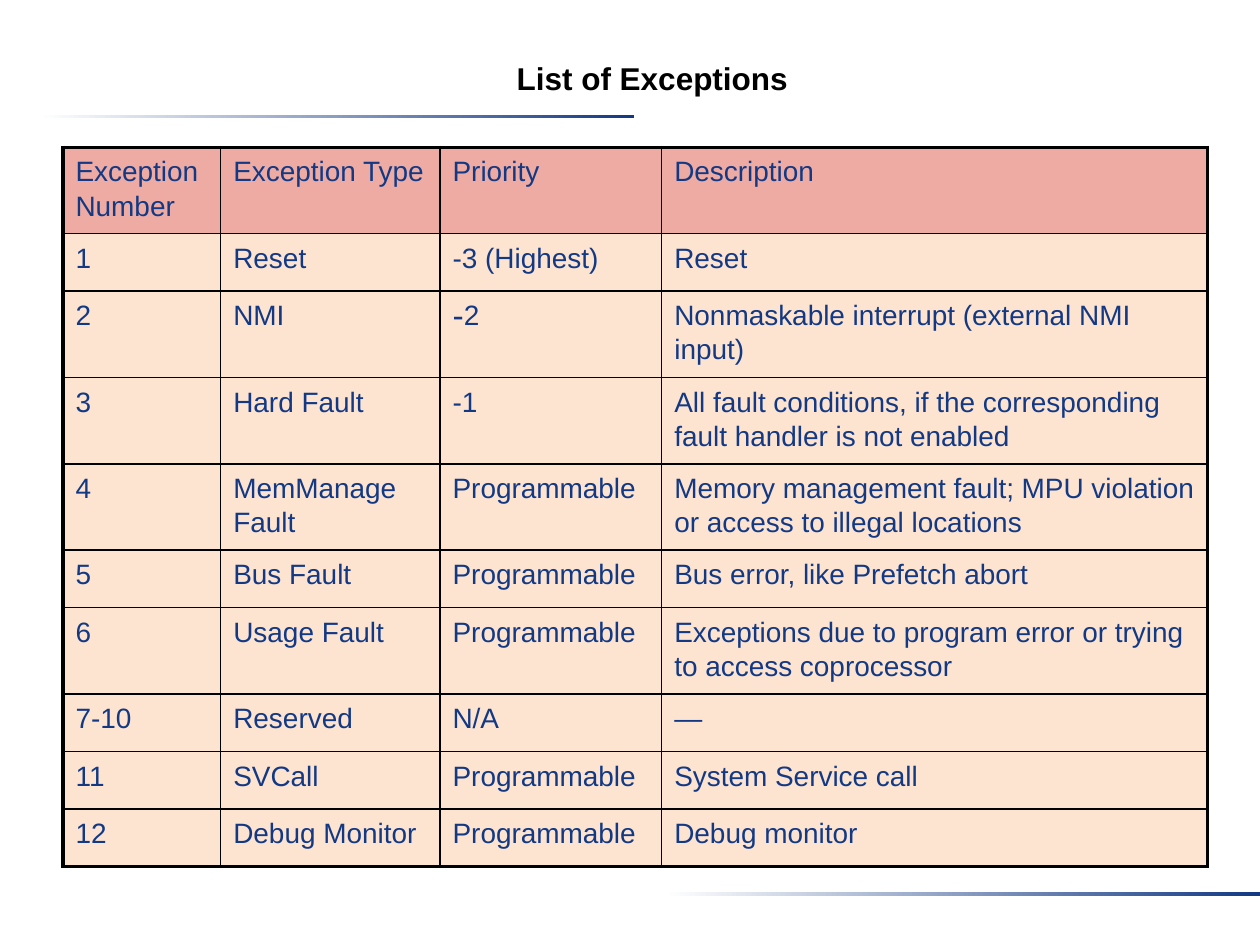
from lxml.etree import SubElement
from pptx import Presentation
from pptx.dml.color import RGBColor
from pptx.enum.shapes import MSO_SHAPE as Shape
from pptx.enum.text import MSO_ANCHOR as Anchor, MSO_AUTO_SIZE as AutoSize, PP_ALIGN as Align
from pptx.oxml import parse_xml
from pptx.oxml.ns import nsdecls, qn
from pptx.util import Cm, Pt

NAVY, BLACK, WHITE = "133984", "000000", "FFFFFF"
HEADER_FILL, BODY_FILL = "DD594B", "FACBA4"
COLUMN_WIDTHS = [3.18, 4.42, 4.47, 11]
SINGLE_ROW, DOUBLE_ROW = 1.16, 1.74
DOUBLE_ROWS = {0, 2, 3, 4, 6}
OUTER_LINE, INNER_LINE = Pt(2.25), Pt(1)
BULLETED_CELL = (2, 2)

EXCEPTIONS = [
    ("Exception Number", "Exception Type", "Priority", "Description"),
    ("1", "Reset", "-3 (Highest)", "Reset"),
    ("2", "NMI", "2", "Nonmaskable interrupt (external NMI input)"),
    ("3", "Hard Fault", "-1",
     "All fault conditions, if the corresponding fault handler is not enabled"),
    ("4", "MemManage Fault", "Programmable",
     "Memory management fault; MPU violation or access to illegal locations"),
    ("5", "Bus Fault", "Programmable", "Bus error, like Prefetch abort"),
    ("6", "Usage Fault", "Programmable",
     "Exceptions due to program error or trying to access coprocessor"),
    ("7-10", "Reserved", "N/A", "—"),
    ("11", "SVCall", "Programmable", "System Service call"),
    ("12", "Debug Monitor", "Programmable", "Debug monitor"),
]


def rgb(value):
    """Turn a hex string into a colour."""
    return RGBColor.from_string(value)


def assign(target, values):
    """Set each attribute named in a dict of format values."""
    for name, value in values.items():
        setattr(target, name, value)


def write(para, text, size, color, bold=False):
    """Add one formatted span of text to a paragraph."""
    span = para.add_run()
    span.text = text
    assign(span.font, {"name": "Arial", "size": Pt(size), "bold": bold})
    span.font.color.rgb = rgb(color)


def add_bar(page, left, top, width, height):
    """Draw a thin bar that fades from white to navy."""
    bar = page.shapes.add_shape(Shape.RECTANGLE, Cm(left), Cm(top), Cm(width), Cm(height))
    bar.shadow.inherit = False
    bar.line.fill.background()
    bar.fill.gradient()
    bar.fill.gradient_angle = 0
    for stop, color in zip(bar.fill.gradient_stops, (WHITE, NAVY)):
        stop.color.rgb = rgb(color)


def add_title(page, left, top, width, height):
    """Place and format the slide title."""
    title = page.shapes.title
    assign(title, {"left": Cm(left), "top": Cm(top), "width": Cm(width), "height": Cm(height)})
    frame = title.text_frame
    assign(frame, {"word_wrap": True, "auto_size": AutoSize.NONE,
                   "vertical_anchor": Anchor.TOP})
    para = frame.paragraphs[0]
    para.alignment = Align.CENTER
    write(para, "List of Exceptions", 18, BLACK, bold=True)


def style_cell(cell, fill, borders):
    """Give a cell a half-transparent fill and its four borders."""
    cell.fill.solid()
    cell.fill.fore_color.rgb = rgb(fill)
    properties = cell._tc.get_or_add_tcPr()
    color = properties.find(qn("a:solidFill"))[0]
    SubElement(color, qn("a:alpha"), val="50000")
    for index, (side, width) in enumerate(borders.items()):
        properties.insert(index, parse_xml(
            f'<a:ln{side} {nsdecls("a")} w="{width}"><a:solidFill>'
            f'<a:srgbClr val="{BLACK}"/></a:solidFill></a:ln{side}>'))


def add_dash_bullet(para):
    """Put an enlarged dash directly before the text."""
    properties = para._p.get_or_add_pPr()
    properties.set("marL", "0")
    properties.set("indent", "0")
    SubElement(properties, qn("a:buSzPct"), val="120000")
    SubElement(properties, qn("a:buFont"), typeface="Arial")
    SubElement(properties, qn("a:buChar"), char="-")


def add_exception_table(page, left, top):
    """Build the table of exceptions from its top left corner."""
    heights = [DOUBLE_ROW if row in DOUBLE_ROWS else SINGLE_ROW
               for row in range(len(EXCEPTIONS))]
    table = page.shapes.add_table(
        len(heights), len(COLUMN_WIDTHS), Cm(left), Cm(top),
        Cm(sum(COLUMN_WIDTHS)), Cm(sum(heights))).table
    table.horz_banding = False
    for column, width in zip(table.columns, COLUMN_WIDTHS):
        column.width = Cm(width)
    last_row, last_column = len(heights) - 1, len(COLUMN_WIDTHS) - 1
    for row, texts in enumerate(EXCEPTIONS):
        table.rows[row].height = Cm(heights[row])
        for column, text in enumerate(texts):
            cell = table.cell(row, column)
            on_edge = {"L": column == 0, "R": column == last_column,
                       "T": row == 0, "B": row == last_row}
            borders = {side: OUTER_LINE if outer else INNER_LINE
                       for side, outer in on_edge.items()}
            style_cell(cell, BODY_FILL if row else HEADER_FILL, borders)
            para = cell.text_frame.paragraphs[0]
            para.line_spacing = 1.1
            if (row, column) == BULLETED_CELL:
                add_dash_bullet(para)
            write(para, text, 16, NAVY)


def main():
    """Build the deck and save it."""
    deck = Presentation()
    assign(deck, {"slide_width": Cm(25.4), "slide_height": Cm(19.05)})
    page = deck.slides.add_slide(deck.slide_layouts[5])
    add_bar(page, 0.79, 2.31, 11.99, 0.08)
    add_bar(page, 13.41, 17.98, 11.99, 0.08)
    add_title(page, 9.65, 1.07, 7, 1.02)
    add_exception_table(page, 1.27, 2.97)
    deck.save("out.pptx")


if __name__ == "__main__":
    main()
